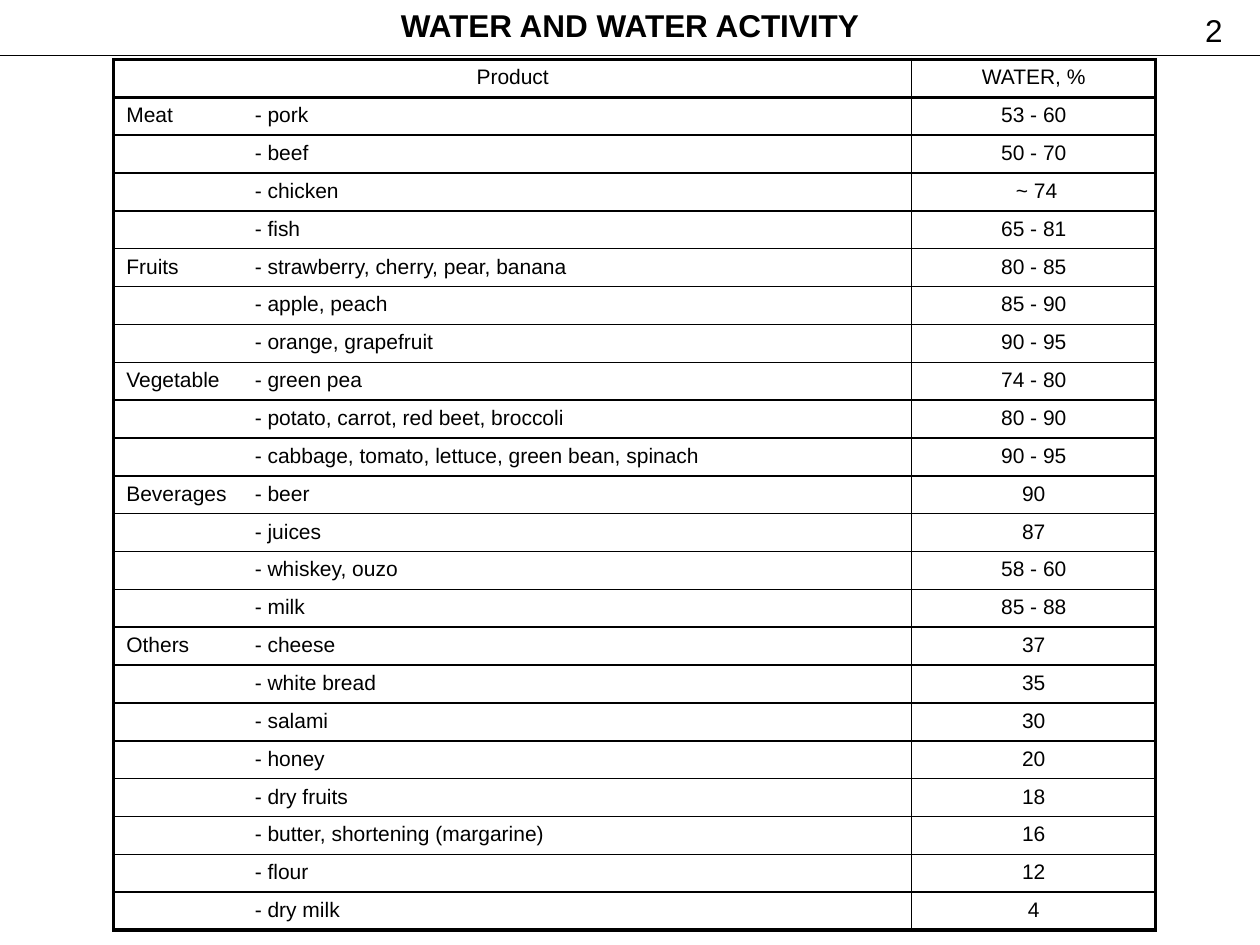
from lxml import etree
from pptx import Presentation
from pptx.dml.color import RGBColor
from pptx.enum.shapes import MSO_CONNECTOR
from pptx.enum.text import MSO_ANCHOR, MSO_AUTO_SIZE, PP_ALIGN
from pptx.oxml.ns import qn
from pptx.util import Pt

BLACK = RGBColor(0, 0, 0)
FONT = "Arial"
LEFT, CENTER = PP_ALIGN.LEFT, PP_ALIGN.CENTER
TOP, MIDDLE = MSO_ANCHOR.TOP, MSO_ANCHOR.MIDDLE
STRAIGHT = MSO_CONNECTOR.STRAIGHT
NO_FIT = MSO_AUTO_SIZE.NONE

TITLE = "WATER AND WATER ACTIVITY"
PAGE = "2"
HEADERS = ("Product", "WATER, %")
GROUPS = [
    ("Meat", [("pork", "53 - 60"), ("beef", "50 - 70"),
              ("chicken", " ~ 74"), ("fish", "65 - 81")]),
    ("Fruits", [("strawberry, cherry, pear, banana", "80 - 85"),
                ("apple, peach", "85 - 90"),
                ("orange, grapefruit", "90 - 95")]),
    ("Vegetable", [("green pea", "74 - 80"),
                   ("potato, carrot, red beet, broccoli", "80 - 90"),
                   ("cabbage, tomato, lettuce, green bean, spinach", "90 - 95")]),
    ("Beverages", [("beer", "90"), ("juices", "87"),
                   ("whiskey, ouzo", "58 - 60"), ("milk", "85 - 88")]),
    ("Others", [("cheese", "37"), ("white bread", "35"), ("salami", "30"),
                ("honey", "20"), ("dry fruits", "18"),
                ("butter, shortening (margarine)", "16"),
                ("flour", "12"), ("dry milk", "4")]),
]

SLIDE_W, SLIDE_H = 720, 540
RULE_Y = 31.8
TABLE_X, TABLE_Y = 65, 34
COL_WIDTHS = (456, 139.5)
ROW_H = 21.65
ITEM_TAB = 73.4
THICK, THIN = 2, 1


def format_paragraph(p, size, align, bold=False):
    p.alignment = align
    for r in p.runs:
        r.font.name = FONT
        r.font.size = Pt(size)
        r.font.bold = bold
        r.font.color.rgb = BLACK


def add_text(s, text, x, y, w, h, align, anchor, bold=False):
    tf = s.shapes.add_textbox(Pt(x), Pt(y), Pt(w), Pt(h)).text_frame
    tf.word_wrap = False
    tf.auto_size = NO_FIT
    tf.vertical_anchor = anchor
    tf.text = text
    format_paragraph(tf.paragraphs[0], 18, align, bold)


def add_tab(p, position):
    tabs = etree.SubElement(p._p.get_or_add_pPr(), qn("a:tabLst"))
    etree.SubElement(tabs, qn("a:tab"), pos=str(Pt(position)), algn="l")


def set_borders(cell, widths):
    tcPr = cell._tc.get_or_add_tcPr()
    for i, (side, width) in enumerate(widths.items()):
        ln = etree.Element(qn("a:ln" + side), w=str(Pt(width)))
        fill = etree.SubElement(ln, qn("a:solidFill"))
        etree.SubElement(fill, qn("a:srgbClr"), val=str(BLACK))
        tcPr.insert(i, ln)


def add_water_table(s):
    rows = [HEADERS]
    for group, items in GROUPS:
        for i, (item, water) in enumerate(items):
            rows.append((f"{'' if i else group}\t- {item}", water))
    table = s.shapes.add_table(
        len(rows), len(COL_WIDTHS), Pt(TABLE_X), Pt(TABLE_Y),
        Pt(sum(COL_WIDTHS)), Pt(ROW_H * len(rows))).table
    table.first_row = table.horz_banding = False
    for column, width in zip(table.columns, COL_WIDTHS):
        column.width = Pt(width)
    last = len(rows) - 1
    for i, row in enumerate(rows):
        table.rows[i].height = Pt(ROW_H)
        for j, text in enumerate(row):
            cell = table.cell(i, j)
            cell.fill.background()
            set_borders(cell, {
                "L": THICK if j == 0 else THIN,
                "R": THICK if j == 1 else THIN,
                "T": THICK if i < 2 else THIN,
                "B": THICK if i in (0, last) else THIN,
            })
            p = cell.text_frame.paragraphs[0]
            p.text = text
            is_item = i > 0 and j == 0
            if is_item:
                add_tab(p, ITEM_TAB)
            format_paragraph(p, 12, LEFT if is_item else CENTER)


def main():
    prs = Presentation()
    prs.slide_width, prs.slide_height = Pt(SLIDE_W), Pt(SLIDE_H)
    s = prs.slides.add_slide(prs.slide_layouts[6])

    rule = s.shapes.add_connector(STRAIGHT, 0, Pt(RULE_Y), Pt(SLIDE_W), Pt(RULE_Y))
    rule.line.color.rgb = BLACK
    rule.line.width = Pt(0.75)
    etree.SubElement(rule._element.spPr, qn("a:effectLst"))

    add_text(s, PAGE, 681.6, 2.9, 24.5, 29, LEFT, TOP)
    add_water_table(s)
    add_text(s, TITLE, 220.3, 0, 279.4, 29, CENTER, MIDDLE, bold=True)
    prs.save("out.pptx")


if __name__ == "__main__":
    main()
